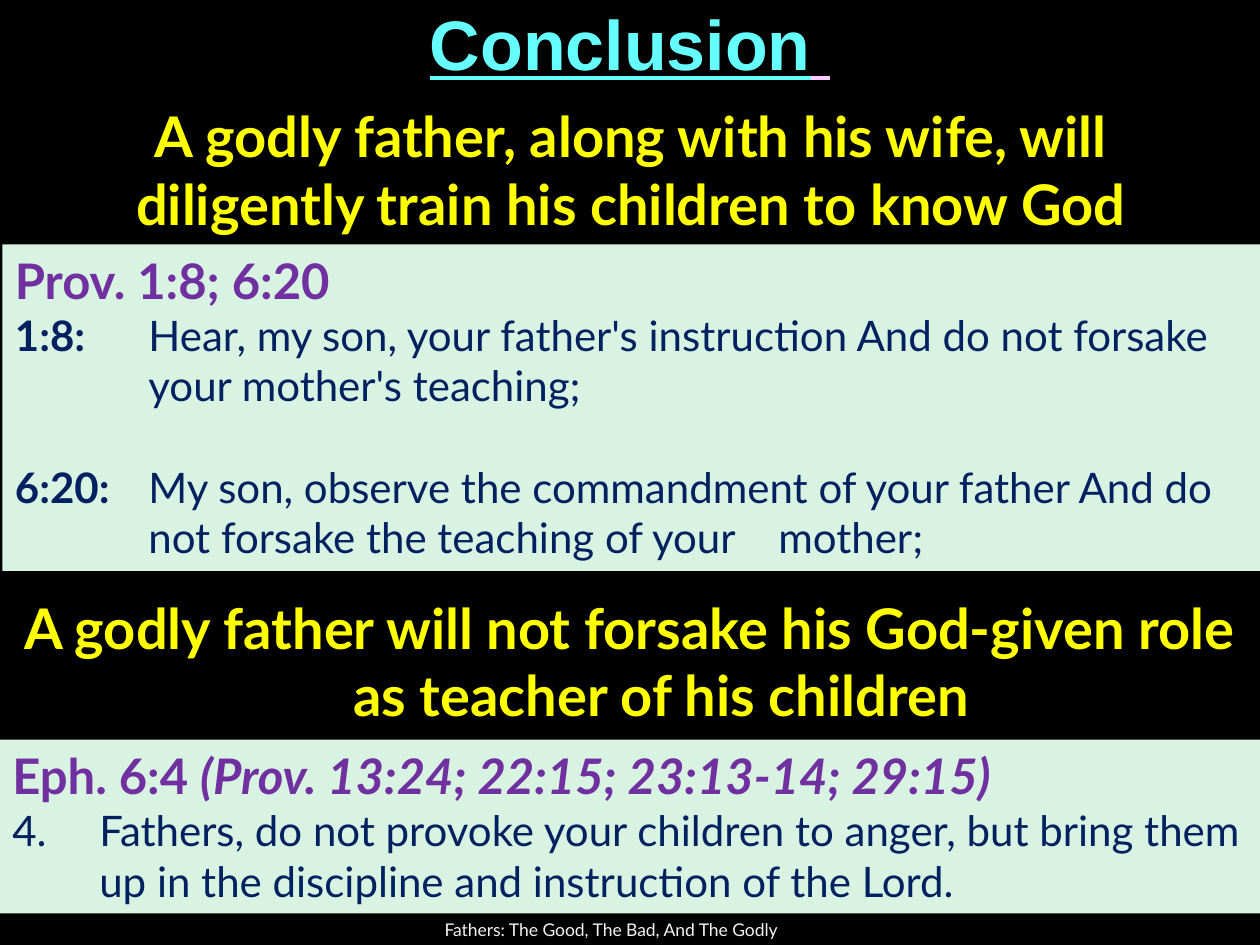
from dataclasses import dataclass

from pptx import Presentation
from pptx.dml.color import RGBColor
from pptx.enum.shapes import MSO_SHAPE
from pptx.enum.text import MSO_ANCHOR, PP_ALIGN
from pptx.util import Inches, Pt


@dataclass(frozen=True)
class Theme:
    background: str = "000000"
    title: str = "66FFFF"
    title_end: str = "FFCCFF"
    heading: str = "FFFF00"
    panel: str = "D8F3E2"
    reference: str = "7030A0"
    verse: str = "002060"
    footer: str = "F2F2F2"
    title_font: str = "Arial"
    body_font: str = "Lato"
    title_size: int = 40
    heading_size: int = 32
    reference_size: int = 28
    verse_size: int = 24
    footer_size: int = 10


def add_text(paragraph, text, font, size, color, bold=False, italic=False, underline=False):
    run = paragraph.add_run()
    run.text = text
    run.font.name = font
    run.font.size = Pt(size)
    run.font.color.rgb = RGBColor.from_string(color)
    run.font.bold = bold
    run.font.italic = italic
    run.font.underline = underline


class ScriptureSlide:
    def __init__(self, slide, theme):
        self.slide = slide
        self.theme = theme
        slide.background.fill.solid()
        slide.background.fill.fore_color.rgb = RGBColor.from_string(theme.background)

    def text_box(self, left, top, width, height, anchor=MSO_ANCHOR.TOP):
        box = self.slide.shapes.add_textbox(
            Inches(left), Inches(top), Inches(width), Inches(height))
        box.text_frame.word_wrap = True
        box.text_frame.vertical_anchor = anchor
        return box.text_frame

    def paragraph(self, frame, first=False, align=PP_ALIGN.LEFT, hanging=0, before=0):
        line = frame.paragraphs[0] if first else frame.add_paragraph()
        line.alignment = align
        line.space_before = Pt(before)
        properties = line._p.get_or_add_pPr()
        properties.set("marL", str(Inches(hanging)))
        properties.set("indent", str(-Inches(hanging)))
        return line

    def title(self, text):
        theme = self.theme
        frame = self.text_box(0, 0, 10, 0.67, MSO_ANCHOR.MIDDLE)
        line = self.paragraph(frame, first=True, align=PP_ALIGN.CENTER)
        for part, color in ((text, theme.title), (" ", theme.title_end)):
            add_text(line, part, theme.title_font, theme.title_size, color,
                     bold=True, underline=True)

    def footer(self, text):
        theme = self.theme
        frame = self.text_box(3.43, 7.25, 3.17, 0.25, MSO_ANCHOR.MIDDLE)
        add_text(self.paragraph(frame, first=True), text,
                 theme.body_font, theme.footer_size, theme.footer)

    def heading(self, left, top, *lines):
        theme = self.theme
        frame = self.text_box(left, top, 10, 1.18)
        for index, text in enumerate(lines):
            line = self.paragraph(frame, first=index == 0, align=PP_ALIGN.CENTER, hanging=0.5)
            add_text(line, text, theme.body_font, theme.heading_size, theme.heading, bold=True)

    def scripture(self, left, top, height, reference, verses, hanging,
                  related="", bold_labels=False, gap=0):
        theme = self.theme
        panel = self.slide.shapes.add_shape(
            MSO_SHAPE.RECTANGLE, Inches(left), Inches(top), Inches(10), Inches(height))
        panel.shadow.inherit = False
        panel.fill.solid()
        panel.fill.fore_color.rgb = RGBColor.from_string(theme.panel)
        panel.line.fill.background()
        frame = panel.text_frame
        frame.word_wrap = True
        frame.vertical_anchor = MSO_ANCHOR.TOP

        citation = self.paragraph(frame, first=True, hanging=0.5)
        add_text(citation, reference, theme.body_font, theme.reference_size,
                 theme.reference, bold=True)
        if related:
            add_text(citation, related, theme.body_font, theme.reference_size,
                     theme.reference, bold=True, italic=True)
        for index, (label, words) in enumerate(verses):
            line = self.paragraph(frame, hanging=hanging, before=gap if index else 0)
            add_text(line, label, theme.body_font, theme.verse_size, theme.verse,
                     bold=bold_labels)
            add_text(line, "\t" + words, theme.body_font, theme.verse_size, theme.verse)


def main():
    deck = Presentation()
    deck.slide_width, deck.slide_height = Inches(10), Inches(7.5)
    conclusion = ScriptureSlide(deck.slides.add_slide(deck.slide_layouts[6]), Theme())

    conclusion.title("Conclusion")
    conclusion.footer("Fathers: The Good, The Bad, And The Godly")
    conclusion.heading(0.01, 0.76,
                       "A godly father, along with his wife, will",
                       "diligently train his children to know God")
    conclusion.scripture(
        0.02, 1.94, 2.59, "Prov. 1:8; 6:20",
        [("1:8:", "Hear, my son, your father's instruction And do not forsake "
                  "your mother's teaching;"),
         ("6:20:", "My son, observe the commandment of your father And do "
                   "not forsake the teaching of your \tmother;")],
        hanging=1.06, bold_labels=True, gap=29)
    conclusion.heading(0, 4.66, "A godly father will not forsake his God-given role "
                                "as teacher of his children")
    conclusion.scripture(
        0, 5.87, 1.38, "Eph. 6:4 ",
        [("4.", "Fathers, do not provoke your children to anger, but bring them "
                "up in the discipline and instruction of the Lord.")],
        hanging=0.69, related="(Prov. 13:24; 22:15; 23:13-14; 29:15)")

    deck.save("out.pptx")


if __name__ == "__main__":
    main()
